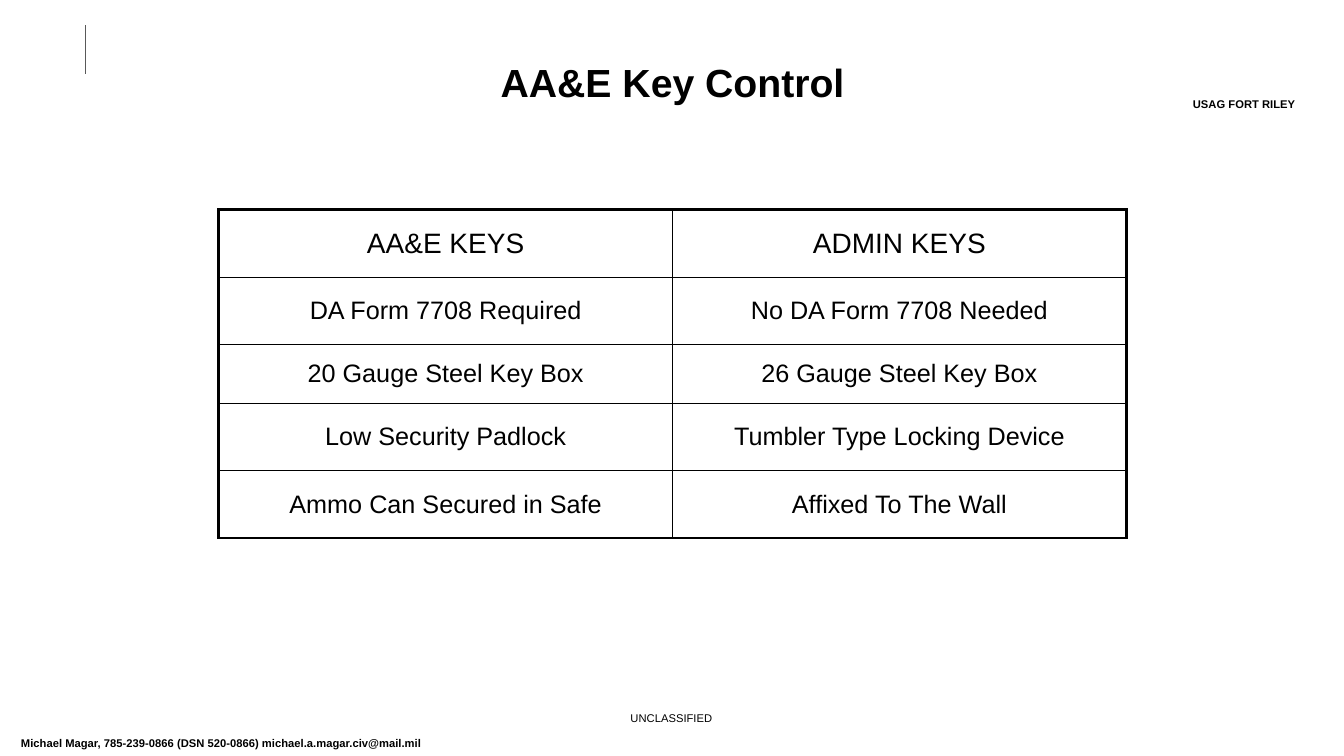
from dataclasses import dataclass

from lxml.etree import SubElement
from pptx import Presentation
from pptx.dml.color import RGBColor
from pptx.enum.shapes import MSO_CONNECTOR
from pptx.enum.text import MSO_ANCHOR, PP_ALIGN
from pptx.oxml.ns import qn
from pptx.slide import Slide
from pptx.table import _Cell as Cell
from pptx.text.text import _Paragraph as Paragraph
from pptx.util import Inches, Pt

BLACK = "000000"
GRAY = "595959"
THIN, THICK = 1, 2.25


@dataclass
class Label:
    text: str
    left: float
    top: float
    width: float
    height: float
    size: float = 8
    bold: bool = False
    align: PP_ALIGN = PP_ALIGN.CENTER
    anchor: MSO_ANCHOR = MSO_ANCHOR.TOP


LABELS = [
    Label("Michael Magar, 785-239-0866 (DSN 520-0866) michael.a.magar.civ@mail.mil",
          0.11, 7.26, 8.3, 0.24, bold=True, align=PP_ALIGN.LEFT),
    Label("UNCLASSIFIED", 4.91, 7.01, 3.5, 0.24),
    Label("USAG FORT RILEY", 11.46, 0.92, 1.76, 0.24, bold=True),
    Label("AA&E Key Control", 2.17, 0.5, 9, 0.62, size=28, bold=True,
          anchor=MSO_ANCHOR.MIDDLE),
]

KEY_ROWS = [
    ("AA&E KEYS", "ADMIN KEYS"),
    ("DA Form 7708 Required", "No DA Form 7708 Needed"),
    ("20 Gauge Steel Key Box", "26 Gauge Steel Key Box"),
    ("Low Security Padlock", "Tumbler Type Locking Device"),
    ("Ammo Can Secured in Safe", "Affixed To The Wall"),
]
ROW_HEIGHTS = [0.67, 0.67, 0.58, 0.67, 0.67]
COLUMN_WIDTH = 4.5


def color(value: str) -> RGBColor:
    return RGBColor.from_string(value)


def write(para: Paragraph, text: str, size: float, bold: bool, align: PP_ALIGN) -> None:
    para.alignment = align
    span = para.add_run()
    span.text = text
    font_format = {"name": "Arial", "size": Pt(size), "bold": bold}
    for name, value in font_format.items():
        setattr(span.font, name, value)
    span.font.color.rgb = color(BLACK)


def add_label(page: Slide, label: Label) -> None:
    box = page.shapes.add_textbox(Inches(label.left), Inches(label.top),
                                  Inches(label.width), Inches(label.height))
    frame = box.text_frame
    frame.word_wrap = True
    frame.vertical_anchor = label.anchor
    write(frame.paragraphs[0], label.text, label.size, label.bold, label.align)


def add_header_rule(page: Slide) -> None:
    rule = page.shapes.add_connector(MSO_CONNECTOR.STRAIGHT, Inches(0.85), Inches(0.25),
                                     Inches(0.85), Inches(0.73))
    rule.line.color.rgb = color(GRAY)
    rule.line.width = Pt(0.75)
    SubElement(rule._element.spPr, qn("a:effectLst"))


def set_borders(cell: Cell, widths: dict[str, float]) -> None:
    properties = cell._tc.get_or_add_tcPr()
    for side, width in widths.items():
        border = SubElement(properties, qn(f"a:ln{side}"), w=str(Pt(width)))
        fill = SubElement(border, qn("a:solidFill"))
        SubElement(fill, qn("a:srgbClr"), val=BLACK)


def add_key_table(page: Slide) -> None:
    row_count, column_count = len(KEY_ROWS), len(KEY_ROWS[0])
    table = page.shapes.add_table(row_count, column_count, Inches(2.17), Inches(2.08),
                                  Inches(column_count * COLUMN_WIDTH),
                                  Inches(sum(ROW_HEIGHTS))).table
    table.first_row = table.horz_banding = False
    for column in table.columns:
        column.width = Inches(COLUMN_WIDTH)

    for r, (texts, height) in enumerate(zip(KEY_ROWS, ROW_HEIGHTS)):
        table.rows[r].height = Inches(height)
        for c, text in enumerate(texts):
            cell = table.cell(r, c)
            cell.vertical_anchor = MSO_ANCHOR.MIDDLE
            write(cell.text_frame.paragraphs[0], text, 20 if r == 0 else 18,
                  False, PP_ALIGN.CENTER)
            # Thick frame outside, thin lines inside
            outer_sides = {"L": c == 0, "R": c == column_count - 1,
                           "T": r == 0, "B": r == row_count - 1}
            set_borders(cell, {side: THICK if outer else THIN
                               for side, outer in outer_sides.items()})
            cell.fill.background()


def main() -> None:
    deck = Presentation()
    deck.slide_width, deck.slide_height = Inches(13.33), Inches(7.5)
    page = deck.slides.add_slide(deck.slide_layouts[6])

    # Header rule, key comparison, then title and page labels
    add_header_rule(page)
    add_key_table(page)
    for label in LABELS:
        add_label(page, label)

    deck.save("out.pptx")


if __name__ == "__main__":
    main()
